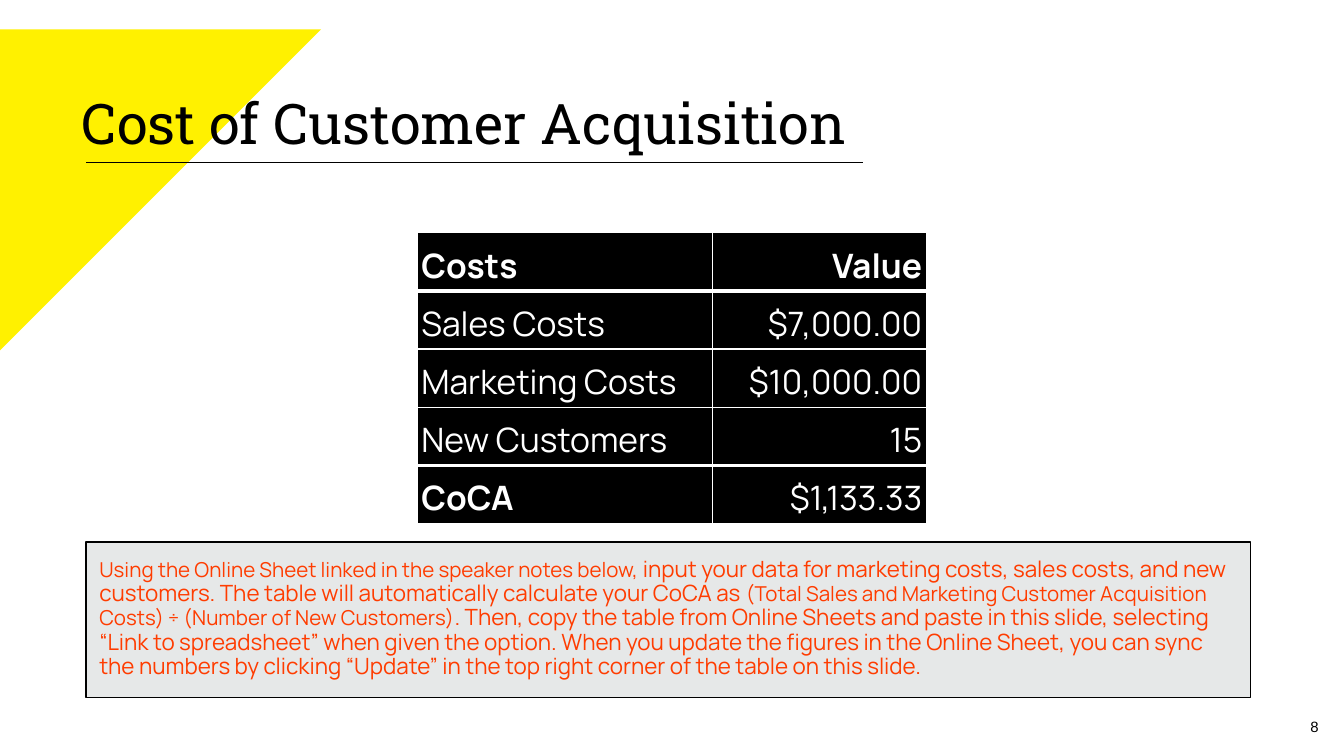
import pptx
import pptx.util
import pptx.dml.color
import pptx.enum.shapes
import pptx.enum.text
import pptx.oxml.ns
import lxml.etree

Pt = pptx.util.Pt
Rgb = pptx.dml.color.RGBColor.from_string
Shape = pptx.enum.shapes.MSO_SHAPE
Align = pptx.enum.text.PP_ALIGN
Anchor = pptx.enum.text.MSO_ANCHOR
Fit = pptx.enum.text.MSO_AUTO_SIZE
qn = pptx.oxml.ns.qn

THEME = {
    "black": "000000",
    "white": "FFFFFF",
    "yellow": "FFF100",
    "grey": "657573",
    "orange": "FF3C00",
    "title": {"name": "Roboto Slab", "size": Pt(30), "bold": False},
    "cell": {"name": "Manrope", "size": Pt(18), "bold": False},
    "head": {"name": "Manrope", "size": Pt(18), "bold": True},
    "note": {"name": "Manrope", "size": Pt(12)},
    "small": {"name": "Manrope", "size": Pt(11)},
    "page": {"name": "Arial", "size": Pt(8)},
}
INSET = 7.2
THIN, THICK = 0.75, 2.25

ROWS = [
    ("Costs", "Value"),
    ("Sales Costs", "$7,000.00"),
    ("Marketing Costs", "$10,000.00"),
    ("New Customers", "15"),
    ("CoCA", "$1,133.33"),
]
BOLD = {(0, 0), (0, 1), (4, 0)}
RULES = [THIN, THICK, THIN, THIN, THICK, THIN]
NOTE = [
    ("Using the Online Sheet linked in the speaker notes below, ", "small"),
    ("input your data for marketing costs, sales costs, and new customers. "
     "The table will automatically calculate your CoCA as ", "note"),
    ("(Total Sales and Marketing Customer Acquisition Costs) ÷ "
     "(Number of New Customers)", "small"),
    (". Then, copy the table from Online Sheets and paste in this slide, "
     "selecting “Link to spreadsheet” when given the option. When you update "
     "the figures in the Online Sheet, you can sync the numbers by clicking "
     "“Update” in the top right corner of the table on this slide.", "note"),
]


def apply(item, values):
    for key, value in values.items():
        setattr(item, key, value)


def place(item, box):
    apply(item, dict(zip(("left", "top", "width", "height"), map(Pt, box))))


def pad(item, wide, high):
    apply(item, {"margin_left": Pt(wide), "margin_right": Pt(wide),
                 "margin_top": Pt(high), "margin_bottom": Pt(high)})


def write(par, text, style, color, align=Align.LEFT):
    par.alignment = align
    run = par.add_run()
    run.text = text
    apply(run.font, THEME[style])
    run.font.color.rgb = Rgb(THEME[color])


def paint(item, color):
    item.fill.solid()
    item.fill.fore_color.rgb = Rgb(THEME[color])


def stroke(line):
    line.width = Pt(THIN)
    line.color.rgb = Rgb(THEME["black"])


def border(cell, widths):
    props = cell._tc.get_or_add_tcPr()
    for side, width in zip("LRTB", widths):
        edge = lxml.etree.SubElement(props, qn("a:ln" + side), w=str(Pt(width)))
        fill = lxml.etree.SubElement(edge, qn("a:solidFill"))
        lxml.etree.SubElement(fill, qn("a:srgbClr"), val=THEME["white"])


def add_corner(slide, box):
    corner = slide.shapes.add_shape(Shape.RIGHT_TRIANGLE, *map(Pt, box))
    corner.rotation = 90
    corner.shadow.inherit = False
    paint(corner, "yellow")
    corner.line.fill.background()
    slide.shapes.title._element.addprevious(corner._element)


def add_title(slide, box):
    left, top, width, height = box
    title = slide.shapes.title
    place(title, box)
    frame = title.text_frame
    pad(frame, INSET, INSET)
    apply(frame, {"vertical_anchor": Anchor.TOP, "word_wrap": True,
                  "auto_size": Fit.NONE})
    write(frame.paragraphs[0], "Cost of Customer Acquisition", "title", "black")
    start, level = left + 9.4, top + 46.8
    rule = slide.shapes.add_connector(
        pptx.enum.shapes.MSO_CONNECTOR.STRAIGHT,
        Pt(start), Pt(level), Pt(start + 416), Pt(level))
    stroke(rule.line)
    lxml.etree.SubElement(rule._element.spPr, qn("a:effectLst"))


def add_costs(slide, box):
    left, top, width, height = box
    frame = slide.shapes.add_table(len(ROWS), 2, *map(Pt, box))
    table = frame.table
    for col, share in zip(table.columns, (0.58, 0.42)):
        col.width = Pt(width * share)
    for row, texts in enumerate(ROWS):
        table.rows[row].height = Pt(height / len(ROWS))
        for col, text in enumerate(texts):
            cell = table.cell(row, col)
            border(cell, (THIN, THIN, RULES[row], RULES[row + 1]))
            paint(cell, "black")
            pad(cell, 2.16, 1.44)
            cell.vertical_anchor = Anchor.BOTTOM
            par = cell.text_frame.paragraphs[0]
            par.line_spacing = 1.15
            write(par, text, "head" if (row, col) in BOLD else "cell", "white",
                  Align.RIGHT if col else Align.LEFT)


def add_note(slide, box):
    note = slide.shapes.add_shape(Shape.RECTANGLE, *map(Pt, box))
    note.shadow.inherit = False
    paint(note, "grey")
    tint = note._element.spPr.find(".//" + qn("a:srgbClr"))
    lxml.etree.SubElement(tint, qn("a:alpha"), val="16000")
    stroke(note.line)
    frame = note.text_frame
    pad(frame, INSET, INSET)
    apply(frame, {"vertical_anchor": Anchor.TOP, "word_wrap": True,
                  "auto_size": Fit.TEXT_TO_FIT_SHAPE})
    for text, style in NOTE:
        write(frame.paragraphs[0], text, style, "orange")


def add_page(slide, box):
    frame = slide.shapes.add_textbox(*map(Pt, box)).text_frame
    pad(frame, INSET, INSET)
    apply(frame, {"vertical_anchor": Anchor.MIDDLE, "word_wrap": True})
    write(frame.paragraphs[0], "8", "page", "black", Align.RIGHT)


def main():
    deck = pptx.Presentation()
    apply(deck, {"slide_width": Pt(720), "slide_height": Pt(405)})
    slide = deck.slides.add_slide(deck.slide_layouts[5])
    add_corner(slide, (0, 15.8, 172, 172))
    add_title(slide, (36.7, 40.3, 671, 60.5))
    add_page(slide, (670.3, 373.7, 43.2, 31))
    add_note(slide, (46.1, 290.3, 624, 83.5))
    add_costs(slide, (223.6, 124.6, 272.6, 156))
    deck.save("out.pptx")


if __name__ == "__main__":
    main()
